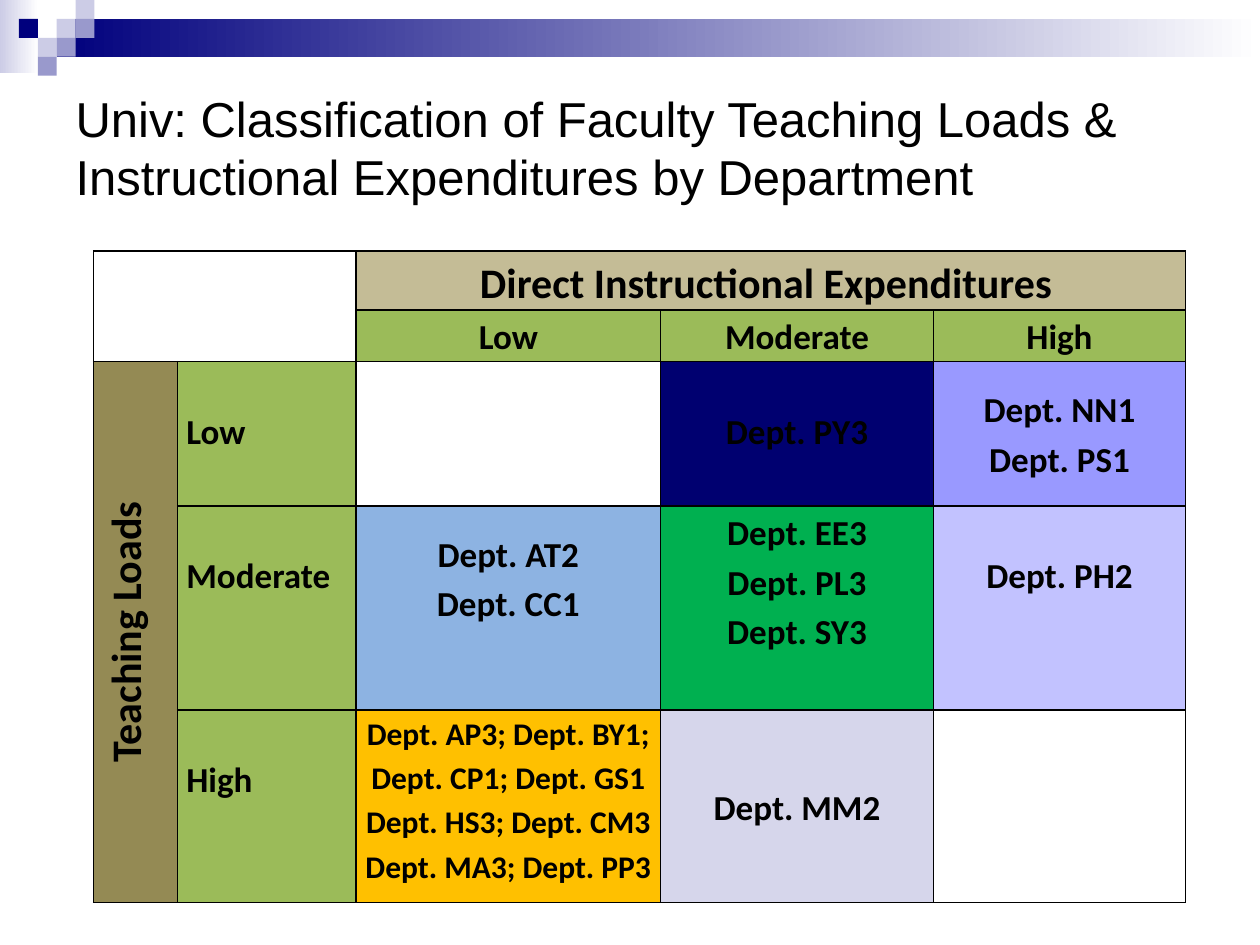
from lxml import etree
from pptx import Presentation
from pptx.dml.color import RGBColor
from pptx.enum import shapes, text
from pptx.oxml import ns
from pptx.util import Pt

COLORS = {
    "black": "000000", "white": "FFFFFF", "navy": "00007D", "pale": "CCCCE6",
    "mid": "9999CC", "tan": "C4BC96", "olive": "948A54", "header": "9BBB59",
    "dark": "000070", "violet": "9999FF", "blue": "8DB3E2", "green": "00B050",
    "lilac": "C2C2FF", "amber": "FFC000", "mist": "D6D6EB",
}


def rgb(name):
    return RGBColor.from_string(COLORS[name])


def add_rect(s, left, top, width, height, *names):
    """Borderless rectangle: one colour is solid, two make a gradient."""
    sp = s.shapes.add_shape(shapes.MSO_SHAPE.RECTANGLE,
                            Pt(left), Pt(top), Pt(width), Pt(height))
    sp.shadow.inherit = False
    sp.line.fill.background()
    if len(names) == 1:
        sp.fill.solid()
        sp.fill.fore_color.rgb = rgb(names[0])
    else:
        sp.fill.gradient()
        sp.fill.gradient_angle = 0
        for stop, name in zip(sp.fill.gradient_stops, names):
            stop.color.rgb = rgb(name)


prs = Presentation()
prs.slide_width, prs.slide_height = Pt(720), Pt(540)
s = prs.slides.add_slide(prs.slide_layouts[5])

# Header band and checker squares
add_rect(s, 0, 0, 22, 42, "pale", "white")
add_rect(s, 32.4, 10.8, 687.6, 21.6, "navy", "white")
SQUARE = 10.8
for col, row, name in [(3, 1, "pale"), (4, 0, "pale"), (4, 1, "mid"),
                       (2, 2, "pale"), (1, 1, "navy"), (3, 2, "mid"),
                       (2, 3, "mid")]:
    add_rect(s, col * SQUARE, row * SQUARE, SQUARE, SQUARE, name)

# Title
title = s.shapes.title
title.left, title.top, title.width, title.height = Pt(36), Pt(30), Pt(648), Pt(108)
tf = title.text_frame
tf.text = ("Univ: Classification of Faculty Teaching Loads & "
           "Instructional Expenditures by Department")
tf.word_wrap = True
tf.auto_size = text.MSO_AUTO_SIZE.NONE
tf.vertical_anchor = text.MSO_ANCHOR.MIDDLE
p = tf.paragraphs[0]
p.alignment = text.PP_ALIGN.LEFT
font = p.runs[0].font
font.name, font.size, font.color.rgb = "Arial", Pt(28), rgb("black")

# Table grid
col_widths = [48, 102, 174, 156, 144]
row_heights = [33.5, 29.5, 82.5, 116.5, 110]
table = s.shapes.add_table(5, 5, Pt(53.5), Pt(143.5),
                           Pt(sum(col_widths)), Pt(sum(row_heights))).table
table.first_row = table.horz_banding = False
for column, width in zip(table.columns, col_widths):
    column.width = Pt(width)
for row, height in zip(table.rows, row_heights):
    row.height = Pt(height)

# Borders and margins of every cell
for cell in table.iter_cells():
    cell.margin_left = cell.margin_right = Pt(5)
    cell.margin_top = cell.margin_bottom = 0
    tcPr = cell._tc.get_or_add_tcPr()
    for side in ("a:lnL", "a:lnR", "a:lnT", "a:lnB"):
        ln = etree.SubElement(tcPr, ns.qn(side), w=str(Pt(1)))
        fill = etree.SubElement(ln, ns.qn("a:solidFill"))
        etree.SubElement(fill, ns.qn("a:srgbClr"), val=COLORS["black"])
    cell.fill.background()

for first, last in [((0, 0), (1, 1)), ((0, 2), (0, 4)), ((2, 0), (4, 0))]:
    table.cell(*first).merge(table.cell(*last))

# Cell contents: row, column, fill, size, space above, lines
SMALL, MEDIUM, LARGE = 12.3, 24.6, 40.3
contents = [
    (0, 2, "tan", 24, 0, ["Direct Instructional Expenditures "]),
    (2, 0, "olive", 24, 0, ["Teaching Loads"]),
    (2, 2, "white", 20, 0, []),
    (2, 3, "dark", 20, MEDIUM, ["Dept. PY3"]),
    (2, 4, "violet", 20, SMALL, ["Dept. NN1", "Dept. PS1"]),
    (3, 2, "blue", 20, SMALL, ["Dept. AT2", "Dept. CC1"]),
    (3, 3, "green", 20, 0, ["Dept. EE3", "Dept. PL3", "Dept. SY3"]),
    (3, 4, "lilac", 20, MEDIUM, ["Dept. PH2"]),
    (4, 2, "amber", 18, 0, ["Dept. AP3; Dept. BY1; Dept. CP1; Dept. GS1",
                            "Dept. HS3; Dept. CM3", "Dept. MA3; Dept. PP3"]),
    (4, 3, "mist", 20, LARGE, ["Dept. MM2"]),
]
for i, level in enumerate(["Low", "Moderate", "High"]):
    contents.append((1, i + 2, "header", 20, 0, [level]))
    contents.append((i + 2, 1, "header", 20, MEDIUM, [level]))

for row, col, fill, size, above, lines in contents:
    cell = table.cell(row, col)
    cell.fill.solid()
    cell.fill.fore_color.rgb = rgb(fill)
    cell.margin_top = Pt(above)
    cell.text_frame.text = "\n".join(lines)
    for p in cell.text_frame.paragraphs:
        p.alignment = text.PP_ALIGN.LEFT if col == 1 else text.PP_ALIGN.CENTER
        p.line_spacing = 1.15
        for r in p.runs:
            r.font.name, r.font.size, r.font.bold = "Calibri", Pt(size), True
            r.font.color.rgb = rgb("black")

# Row heading reads upwards
table.cell(2, 0)._tc.get_or_add_tcPr().set("vert", "vert270")

prs.save("out.pptx")
